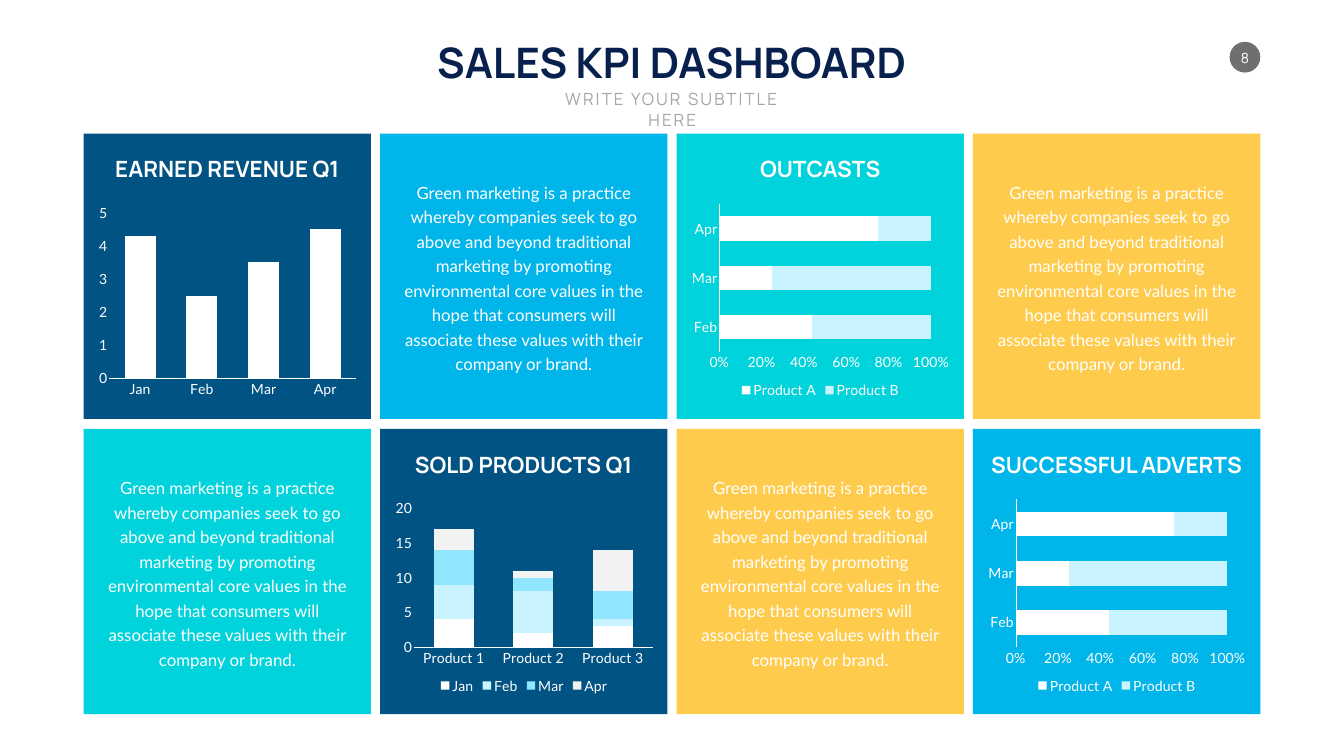
from lxml import etree
from pptx import Presentation
from pptx.chart.data import CategoryChartData
from pptx.dml.color import RGBColor
from pptx.enum.chart import XL_CHART_TYPE as CT, XL_LEGEND_POSITION as LP, XL_TICK_MARK as TM
from pptx.enum.shapes import MSO_SHAPE as SHAPE
from pptx.enum.text import MSO_ANCHOR as ANCHOR, MSO_AUTO_SIZE as AUTO, PP_ALIGN as ALIGN
from pptx.util import Inches, Pt

COLORS = {
    "navy": "08204D", "blue": "015384", "sky": "00B5E9", "teal": "00D3DB",
    "yellow": "FECB4C", "white": "FFFFFF", "pale": "C8F3FF", "light": "90E6FF",
    "off_white": "F2F2F2", "gray": "A6A6A6", "badge": "6D706D",
}
HEADING, BODY = "Manrope", "Lato"
SERIES_COLORS = ["white", "pale", "light", "off_white"]

LEFT, TOP = 1.66, 2.65
TILE_W, TILE_H = 5.7, 5.66
STEP_X, STEP_Y = 5.88, 5.86

BLURB = ("Green marketing is a practice whereby companies seek to go above and beyond "
         "traditional marketing by promoting environmental core values in the hope that "
         "consumers will associate these values with their company or brand.")

REVENUE = dict(kind=CT.COLUMN_CLUSTERED, cats=["Jan", "Feb", "Mar", "Apr"],
               series={"Series 1": [4.3, 2.5, 3.5, 4.5]},
               overlap=-27, top=5, unit=1, legend=False)
PRODUCTS = dict(kind=CT.COLUMN_STACKED, cats=["Product 1", "Product 2", "Product 3"],
                series={"Jan": [4, 2, 3], "Feb": [5, 6, 1],
                        "Mar": [5, 2, 4], "Apr": [3, 1, 6]},
                top=20, unit=5)
SHARES = dict(kind=CT.BAR_STACKED_100, cats=["Feb", "Mar", "Apr"],
              series={"Product A": [44, 25, 75], "Product B": [56, 75, 25]},
              number_format="0%")

# Rows of tiles: (colour, heading, chart); a tile without a chart holds the blurb.
TILES = [
    [("blue", "EARNED REVENUE Q1", REVENUE), ("sky", None, None),
     ("teal", "OUTCASTS", SHARES), ("yellow", None, None)],
    [("teal", None, None), ("blue", "SOLD PRODUCTS Q1", PRODUCTS),
     ("yellow", None, None), ("sky", "SUCCESSFUL ADVERTS", SHARES)],
]


def rgb(name):
    return RGBColor.from_string(COLORS[name])


def set_font(font, size, color="white", name=BODY, bold=False):
    font.size, font.name, font.bold = Pt(size), name, bold
    font.color.rgb = rgb(color)


class Dashboard:
    """Holds the style and the current slide."""

    def __init__(self, slide):
        self.slide = slide

    def shape(self, kind, x, y, w, h, color):
        sp = self.slide.shapes.add_shape(kind, Inches(x), Inches(y), Inches(w), Inches(h))
        sp.shadow.inherit = False
        sp.fill.solid()
        sp.fill.fore_color.rgb = rgb(color)
        sp.line.fill.background()

    def text(self, text, x, y, w, h, size, color="white", font=HEADING, bold=False,
             wrap=False, anchor=ANCHOR.MIDDLE):
        """Add a centred text box and return it."""
        sp = self.slide.shapes.add_textbox(Inches(x), Inches(y), Inches(w), Inches(h))
        tf = sp.text_frame
        tf.word_wrap, tf.vertical_anchor = wrap, anchor
        tf.auto_size = AUTO.SHAPE_TO_FIT_TEXT
        p = tf.paragraphs[0]
        p.text, p.alignment = text, ALIGN.CENTER
        set_font(p.font, size, color, font, bold)
        return sp

    def header(self):
        self.text("SALES KPI DASHBOARD", 8.43, 0.67, 9.79, 1.11, 60, "navy",
                  bold=True, anchor=ANCHOR.TOP)
        sp = self.text("WRITE YOUR SUBTITLE HERE", 10.62, 1.72, 5.43, 0.5, 24, "gray",
                       wrap=True, anchor=ANCHOR.TOP)
        r = sp.text_frame.paragraphs[0].runs[0]
        r.font.size = Pt(24)
        r.font._element.set("spc", "300")

    def page_number(self, number):
        self.shape(SHAPE.OVAL, 24.39, 0.83, 0.61, 0.61, "badge")
        tf = self.text(number, 24.49, 0.97, 0.41, 0.34, 20).text_frame
        tf.margin_left = tf.margin_right = tf.margin_top = tf.margin_bottom = 0

    def blurb(self, x, y):
        sp = self.text(BLURB, x + 0.38, y + 0.84, 4.94, 3.98, 24, font=BODY, wrap=True)
        p = sp.text_frame.paragraphs[0]
        p.line_spacing, p.space_before = Pt(35), Pt(4.8)

    def chart(self, x, y, kind, cats, series, overlap=100, top=None, unit=None,
              number_format="General", legend=True):
        data = CategoryChartData()
        data.categories = cats
        for name, values in series.items():
            data.add_series(name, values)
        chart = self.slide.shapes.add_chart(
            kind, Inches(x), Inches(y), Inches(5.31), Inches(4), data).chart
        set_font(chart.font, 20)
        chart.has_title = False
        chart.has_legend = legend
        if legend:
            chart.legend.position = LP.BOTTOM
            chart.legend.include_in_layout = False
            set_font(chart.legend.font, 20)

        plot = chart.plots[0]
        plot.vary_by_categories = False
        plot.gap_width, plot.overlap = 100, overlap
        for item, color in zip(plot.series, SERIES_COLORS):
            item.format.fill.solid()
            item.format.fill.fore_color.rgb = rgb(color)

        cat_axis, val_axis = chart.category_axis, chart.value_axis
        for axis in (cat_axis, val_axis):
            axis.major_tick_mark = axis.minor_tick_mark = TM.NONE
            axis.has_major_gridlines = False
            set_font(axis.tick_labels.font, 20)
        cat_axis.format.line.color.rgb = rgb("white")
        cat_axis.format.line.width = Pt(0.75)
        val_axis.format.line.fill.background()
        val_axis.tick_labels.number_format = number_format
        val_axis.tick_labels.number_format_is_linked = False
        if top:
            val_axis.minimum_scale, val_axis.maximum_scale = 0, top
            val_axis.major_unit = unit

    def tile(self, x, y, color, heading, chart):
        self.shape(SHAPE.RECTANGLE, x, y, TILE_W, TILE_H, color)
        if chart:
            self.chart(x + 0.2, y + 1.32, **chart)
            self.text(heading, x + 0.25, y + 0.38, 5.2, 0.64, 32, bold=True)
        else:
            self.blurb(x, y)


def main():
    prs = Presentation()
    prs.slide_width, prs.slide_height = Inches(26.66), Inches(15)
    board = Dashboard(prs.slides.add_slide(prs.slide_layouts[6]))
    board.page_number("8")
    board.header()
    for row, tiles in enumerate(TILES):
        for col, tile in enumerate(tiles):
            board.tile(LEFT + col * STEP_X, TOP + row * STEP_Y, *tile)
    prs.save("out.pptx")


if __name__ == "__main__":
    main()
